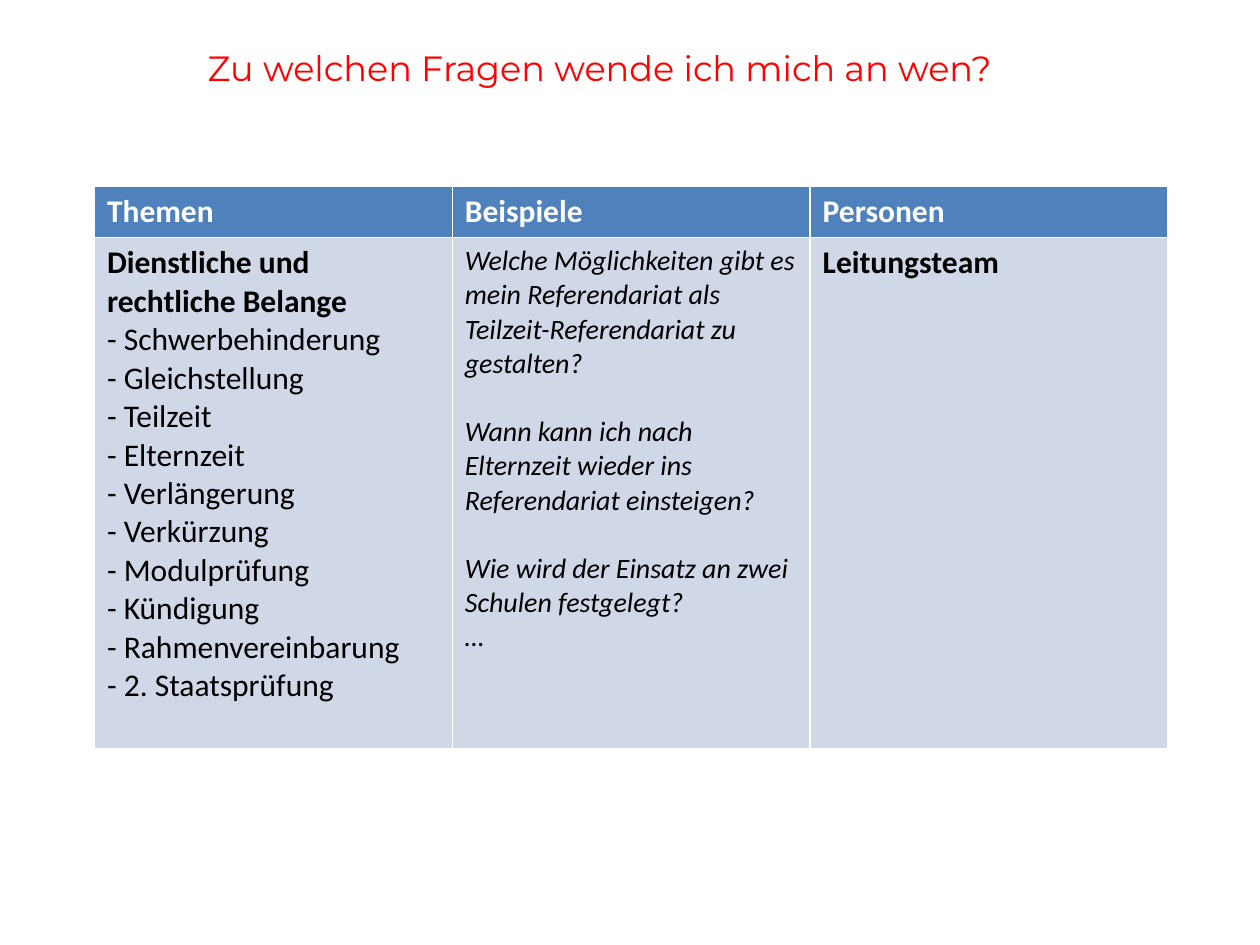
from dataclasses import dataclass

from pptx import Presentation
from pptx import util as u
from pptx.dml.color import RGBColor
from pptx.enum import text


@dataclass(frozen=True)
class Theme:
    title_font: str = "Montserrat"
    table_font: str = "Calibri"
    red: RGBColor = RGBColor(0xFF, 0x00, 0x00)
    white: RGBColor = RGBColor(0xFF, 0xFF, 0xFF)
    black: RGBColor = RGBColor(0x00, 0x00, 0x00)
    header: RGBColor = RGBColor(0x4F, 0x81, 0xBD)
    body: RGBColor = RGBColor(0xD0, 0xD8, 0xE8)
    title_size: u.Pt = u.Pt(20)
    topic_size: u.Pt = u.Pt(18)
    example_size: u.Pt = u.Pt(16)
    question_gap: u.Pt = u.Pt(19.5)


theme = Theme()


def style(p, name, size, color, bold=False, italic=False):
    font = p.font
    font.name, font.size, font.bold, font.italic = name, size, bold, italic
    font.color.rgb = color


def fill_cell(cell, lines, fill, size, color, bold_lines=0, italic=False):
    cell.fill.solid()
    cell.fill.fore_color.rgb = fill
    tf = cell.text_frame
    tf.text = "\n".join(lines)
    for i, p in enumerate(tf.paragraphs):
        style(p, theme.table_font, size, color, i < bold_lines, italic)


prs = Presentation()
prs.slide_width, prs.slide_height = u.Inches(10), u.Inches(7.5)
s = prs.slides.add_slide(prs.slide_layouts[6])

# Table: the default style supplies the white cell borders
headings = ["Themen", "Beispiele", "Personen"]
topics = [
    "Dienstliche und rechtliche Belange",
    "- Schwerbehinderung",
    "- Gleichstellung",
    "- Teilzeit",
    "- Elternzeit",
    "- Verlängerung",
    "- Verkürzung",
    "- Modulprüfung",
    "- Kündigung",
    "- Rahmenvereinbarung",
    "- 2. Staatsprüfung",
]
examples = [
    "Welche Möglichkeiten gibt es mein Referendariat als Teilzeit-Referendariat zu gestalten?",
    "Wann kann ich nach Elternzeit wieder ins Referendariat einsteigen?",
    "Wie wird der Einsatz an zwei Schulen festgelegt?",
    "…",
]
people = ["Leitungsteam"]

table = s.shapes.add_table(
    2, len(headings), u.Inches(0.75), u.Inches(1.48), u.Inches(8.52), u.Inches(4.46)
).table
for row, height in zip(table.rows, (0.4, 4.06)):
    row.height = u.Inches(height)

# Header row
for col, heading in enumerate(headings):
    fill_cell(table.cell(0, col), [heading], theme.header, theme.topic_size, theme.white, bold_lines=1)

# Body row
for col, lines in enumerate((topics, examples, people)):
    is_example = lines is examples
    fill_cell(
        table.cell(1, col), lines, theme.body,
        theme.example_size if is_example else theme.topic_size, theme.black,
        bold_lines=0 if is_example else 1, italic=is_example,
    )

# Space between the example questions
for p in table.cell(1, 1).text_frame.paragraphs[1:3]:
    p.space_before = theme.question_gap

# Title
sp = s.shapes.add_textbox(u.Inches(1.55), u.Inches(0.32), u.Inches(6.99), u.Inches(0.44))
tf = sp.text_frame
tf.word_wrap = True
tf.auto_size = text.MSO_AUTO_SIZE.SHAPE_TO_FIT_TEXT
tf.text = "Zu welchen Fragen wende ich mich an wen?"
style(tf.paragraphs[0], theme.title_font, theme.title_size, theme.red)

prs.save("out.pptx")
